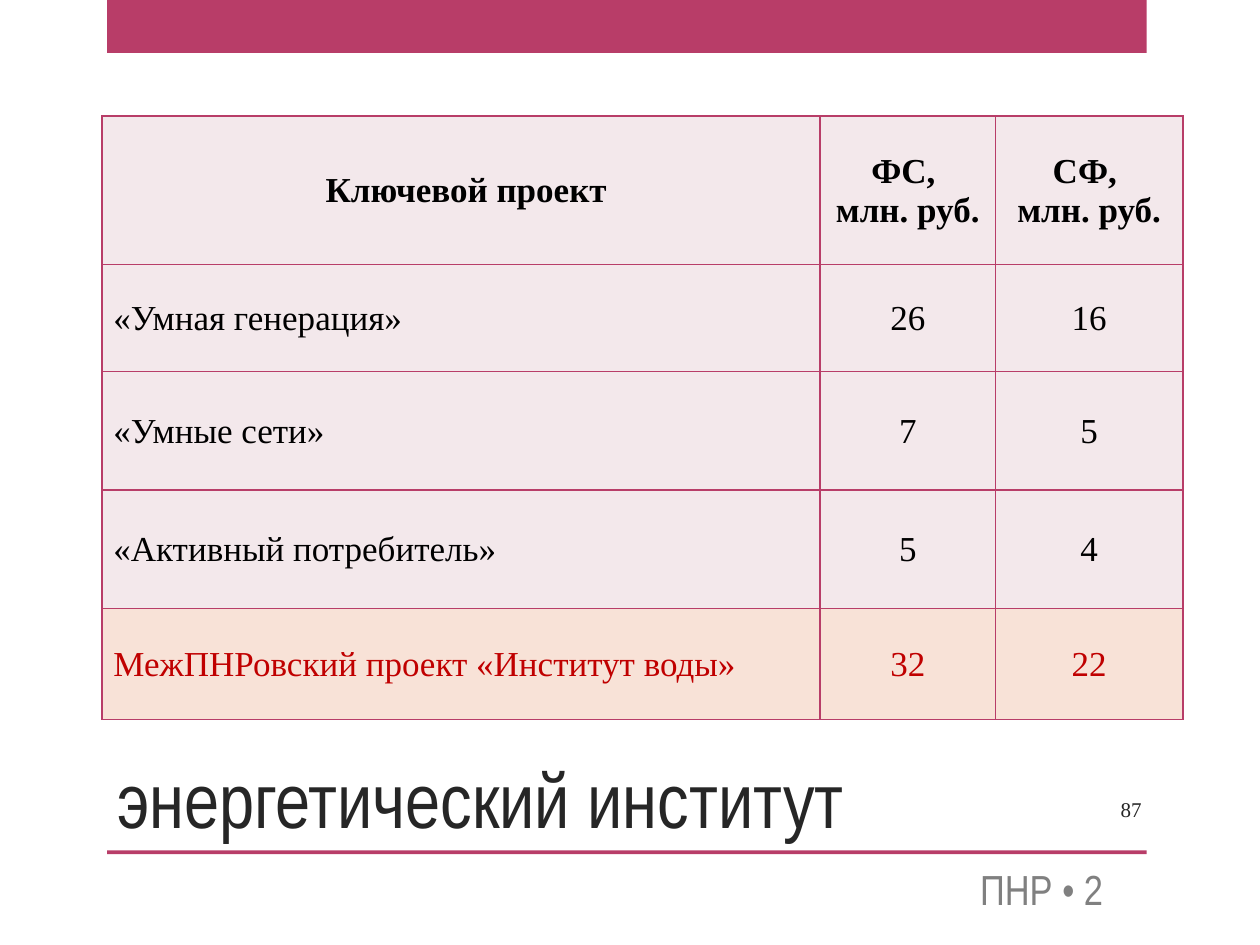
from typing import NamedTuple

from lxml import etree
from pptx import Presentation
from pptx.dml.color import RGBColor
from pptx.enum import shapes, text
from pptx.oxml import ns
from pptx.util import Inches, Pt

CRIMSON = RGBColor(0xB8, 0x3D, 0x68)
PALE_PINK = RGBColor(0xF3, 0xE8, 0xEB)
PEACH = RGBColor(0xF8, 0xE2, 0xD7)
BLACK = RGBColor(0, 0, 0)
RED = RGBColor(0xC0, 0, 0)
CHARCOAL = RGBColor(0x26, 0x26, 0x26)
GRAY = RGBColor(0x80, 0x80, 0x80)
SERIF = "Times New Roman"
NARROW = "Arial Narrow"


class Box(NamedTuple):
    left: float
    top: float
    width: float
    height: float


class Project(NamedTuple):
    cells: tuple[str, str, str]
    height: float
    fill: RGBColor = PALE_PINK
    color: RGBColor = BLACK
    header: bool = False


BANDS = [Box(0.85, 0, 8.25, 0.42), Box(0.85, 6.75, 8.25, 0.03)]
COLUMN_WIDTHS = [5.7, 1.39, 1.49]
PROJECTS = [
    Project(("Ключевой проект", "ФС, \nмлн. руб.", "СФ, \nмлн. руб."), 1.18, header=True),
    Project(("«Умная генерация»", "26", "16"), 0.85),
    Project(("«Умные сети»", "7", "5"), 0.94),
    Project(("«Активный потребитель»", "5", "4"), 0.94),
    Project(("МежПНРовский проект «Институт воды»", "32", "22"), 0.88, PEACH, RED),
]


def lengths(box: Box) -> list[int]:
    return [Inches(value) for value in box]


def style(paragraph, font_name: str, size: float, color: RGBColor, bold: bool = False) -> None:
    paragraph.font.name = font_name
    paragraph.font.size = Pt(size)
    paragraph.font.bold = bold
    paragraph.font.color.rgb = color


def draw_band(slide, box: Box) -> None:
    band = slide.shapes.add_shape(shapes.MSO_SHAPE.RECTANGLE, *lengths(box))
    band.shadow.inherit = False
    band.fill.solid()
    band.fill.fore_color.rgb = CRIMSON
    band.line.fill.background()


def fill_label(label, words: str, anchor, align, font_name: str, size: float, color: RGBColor):
    frame = label.text_frame
    frame.text = words
    frame.word_wrap = True
    frame.auto_size = text.MSO_AUTO_SIZE.NONE
    frame.vertical_anchor = anchor
    paragraph = frame.paragraphs[0]
    paragraph.alignment = align
    style(paragraph, font_name, size, color)
    return paragraph


def add_borders(cell) -> None:
    properties = cell._tc.get_or_add_tcPr()
    for position, side in enumerate(("a:lnL", "a:lnR", "a:lnT", "a:lnB")):
        border = etree.Element(ns.qn(side), w=str(Pt(1)))
        fill = etree.SubElement(border, ns.qn("a:solidFill"))
        etree.SubElement(fill, ns.qn("a:srgbClr"), val=str(CRIMSON))
        properties.insert(position, border)


def fill_cell(cell, words: str, project: Project, first: bool) -> None:
    cell.text = words
    cell.vertical_anchor = text.MSO_ANCHOR.MIDDLE
    cell.margin_left = Inches(0.09 if first else 0.01)
    cell.margin_top = cell.margin_right = Inches(0.01)
    cell.margin_bottom = 0
    cell.fill.solid()
    cell.fill.fore_color.rgb = project.fill
    add_borders(cell)
    centered = project.header or not first
    for paragraph in cell.text_frame.paragraphs:
        paragraph.alignment = text.PP_ALIGN.CENTER if centered else text.PP_ALIGN.LEFT
        style(paragraph, SERIF, 20, project.color, project.header)


def draw_table(slide, box: Box) -> None:
    table = slide.shapes.add_table(len(PROJECTS), len(COLUMN_WIDTHS), *lengths(box)).table
    table.first_row = table.horz_banding = False
    for column, width in zip(table.columns, COLUMN_WIDTHS):
        column.width = Inches(width)
    for row, project in zip(table.rows, PROJECTS):
        row.height = Inches(project.height)
        for index, words in enumerate(project.cells):
            fill_cell(row.cells[index], words, project, index == 0)


def main() -> None:
    deck = Presentation()
    deck.slide_width, deck.slide_height = Inches(10), Inches(7.5)
    slide = deck.slides.add_slide(deck.slide_layouts[5])
    for band in BANDS:
        draw_band(slide, band)

    title = slide.shapes.title
    title.left, title.top, title.width, title.height = lengths(Box(0.83, 5.88, 7.24, 0.87))
    fill_label(title, "энергетический институт", text.MSO_ANCHOR.BOTTOM,
               text.PP_ALIGN.LEFT, NARROW, 44, CHARCOAL)

    page_number = slide.shapes.add_textbox(*lengths(Box(8.33, 6.22, 0.83, 0.4)))
    fill_label(page_number, "87", text.MSO_ANCHOR.MIDDLE,
               text.PP_ALIGN.RIGHT, SERIF, 12, CHARCOAL)

    section = slide.shapes.add_textbox(*lengths(Box(7.68, 6.81, 1.42, 0.49)))
    fill_label(section, "ПНР • 2", text.MSO_ANCHOR.MIDDLE,
               text.PP_ALIGN.LEFT, NARROW, 24, GRAY)

    draw_table(slide, Box(0.81, 0.92, sum(COLUMN_WIDTHS), sum(p.height for p in PROJECTS)))
    deck.save("out.pptx")


if __name__ == "__main__":
    main()
